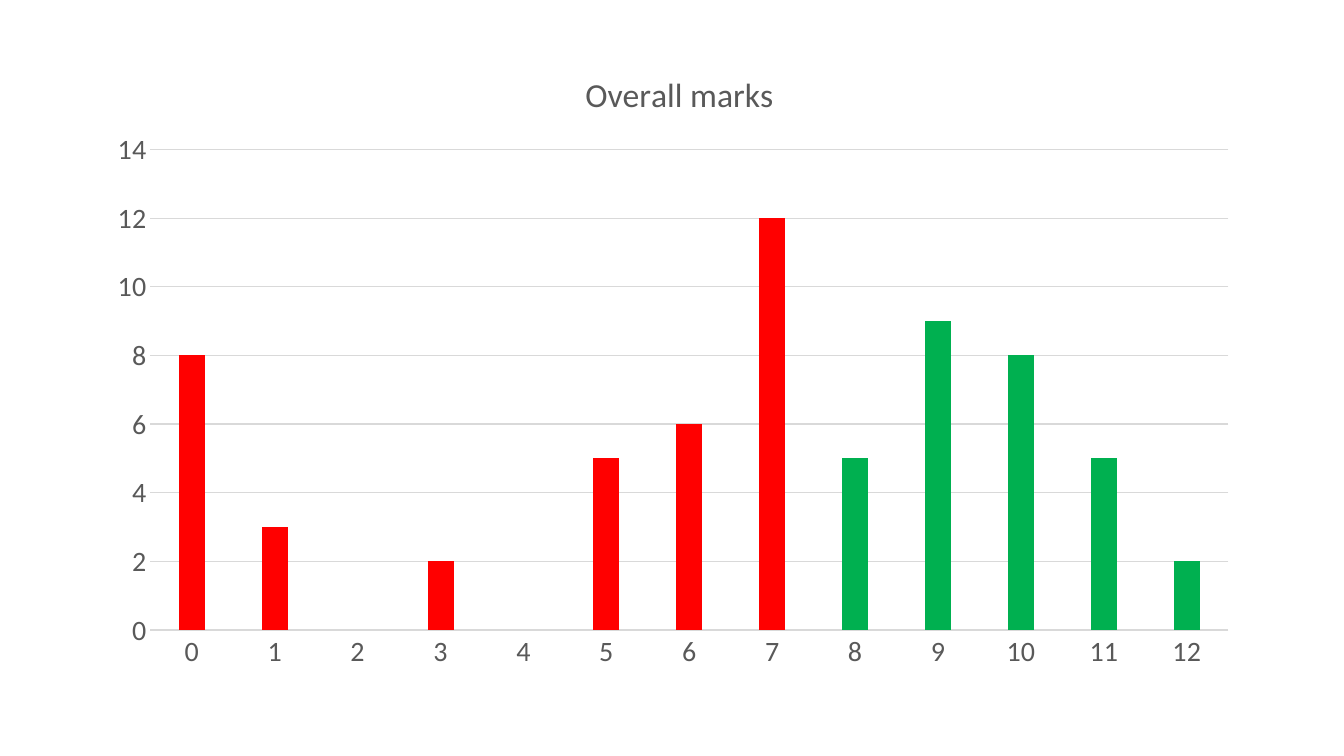
from lxml import etree
from pptx import Presentation
from pptx.chart.data import CategoryChartData
from pptx.dml.color import RGBColor
from pptx.enum.chart import XL_CHART_TYPE as ChartType, XL_TICK_MARK as Tick
from pptx.oxml.ns import qn
from pptx.util import Cm, Pt

FONT = "Calibri"
TEXT, GRID = "595959", "D9D9D9"
SERIES, FAIL, PASS = "ED7D31", "FF0000", "00B050"
PASS_MARK = 8
COUNTS = [8, 3, None, 2, None, 5, 6, 12, 5, 9, 8, 5, 2]


def rgb(value):
    return RGBColor.from_string(value)


def style_font(font, size):
    font.name = FONT
    font.size = Pt(size)
    font.bold = False
    font.color.rgb = rgb(TEXT)


def style_fill(fill, color):
    fill.solid()
    fill.fore_color.rgb = rgb(color)


def style_line(line):
    line.color.rgb = rgb(GRID)
    line.width = Pt(0.75)


def set_layout(parent, position, **values):
    for old in parent.findall(qn("c:layout")):
        parent.remove(old)
    layout = etree.Element(qn("c:layout"))
    manual = etree.SubElement(layout, qn("c:manualLayout"))
    for name, value in values.items():
        etree.SubElement(manual, qn(f"c:{name}")).set("val", str(value))
    parent.insert(position, layout)


def add_title(chart, text):
    chart.has_title = True
    title = chart.chart_title
    title.text_frame.text = text
    style_font(title.text_frame.paragraphs[0].runs[0].font, 24)
    title.include_in_layout = False
    set_layout(title._element, 1, xMode="edge", yMode="edge", x=0.42, y=0.04)


def style_axes(chart):
    for axis in (chart.category_axis, chart.value_axis):
        axis.major_tick_mark = axis.minor_tick_mark = Tick.NONE
        style_font(axis.tick_labels.font, 20)
    style_line(chart.category_axis.format.line)
    values = chart.value_axis
    values.minimum_scale, values.maximum_scale, values.major_unit = 0, 14, 2
    values.format.line.fill.background()
    values.has_major_gridlines = True
    style_line(values.major_gridlines.format.line)


def color_bars(plot):
    plot.gap_width, plot.overlap = 219, -27
    plot.vary_by_categories = False
    series = plot.series[0]
    series.invert_if_negative = False
    style_fill(series.format.fill, SERIES)
    for mark, count in enumerate(COUNTS):
        if count is not None:
            color = PASS if mark >= PASS_MARK else FAIL
            style_fill(series.points[mark].format.fill, color)


def add_marks_chart(s, left, top, width, height):
    data = CategoryChartData()
    data.categories = [str(mark) for mark in range(len(COUNTS))]
    data.add_series("Series 1", COUNTS)
    frame = s.shapes.add_chart(
        ChartType.COLUMN_CLUSTERED, left, top, width, height, data)
    chart = frame.chart
    style_font(chart.font, 20)
    chart.has_legend = False
    add_title(chart, "Overall marks")
    style_axes(chart)
    color_bars(chart.plots[0])
    plot_area = chart._chartSpace.find(f".//{qn('c:plotArea')}")
    set_layout(plot_area, 0, layoutTarget="inner", xMode="edge", yMode="edge",
               x=0.05, y=0.17, w=0.93, h=0.75)


def main():
    prs = Presentation()
    prs.slide_width, prs.slide_height = Cm(33.87), Cm(19.05)
    s = prs.slides.add_slide(prs.slide_layouts[6])
    add_marks_chart(s, Cm(2.33), Cm(1.02), Cm(29.21), Cm(16.15))
    prs.save("out.pptx")


if __name__ == "__main__":
    main()
